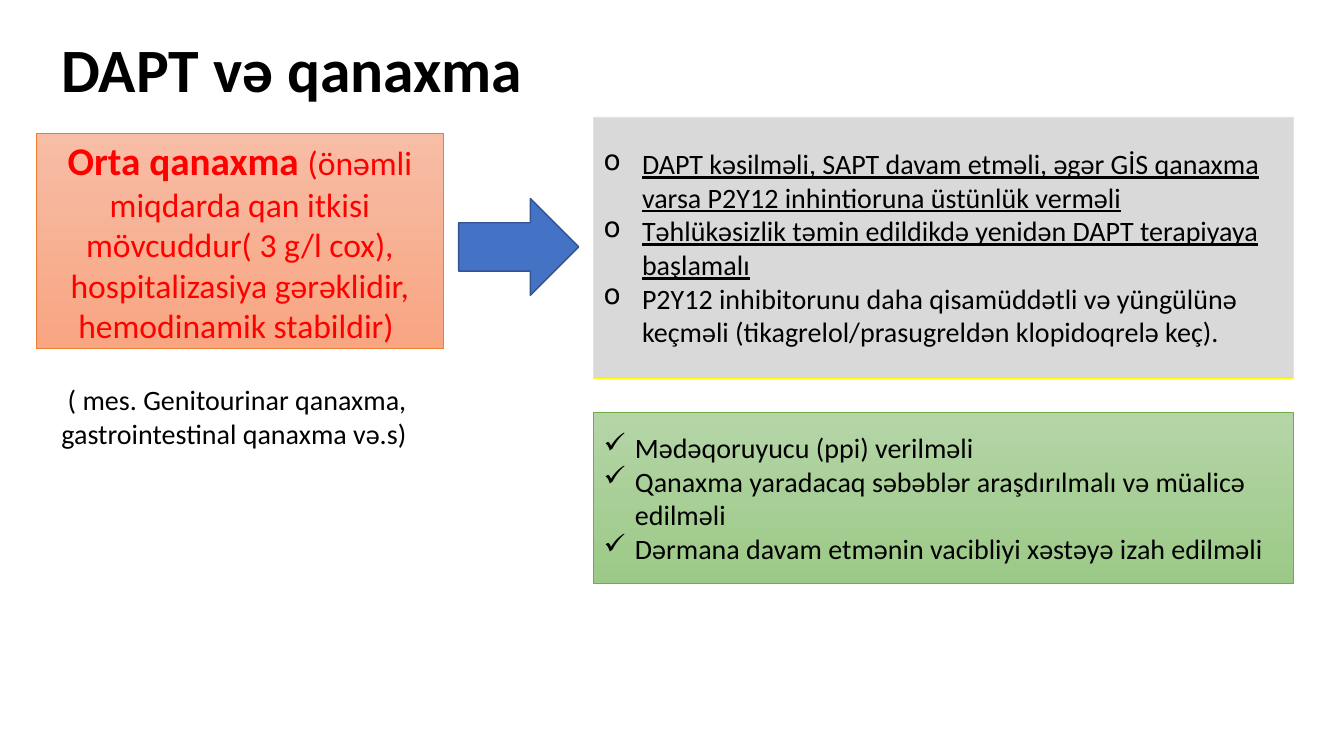
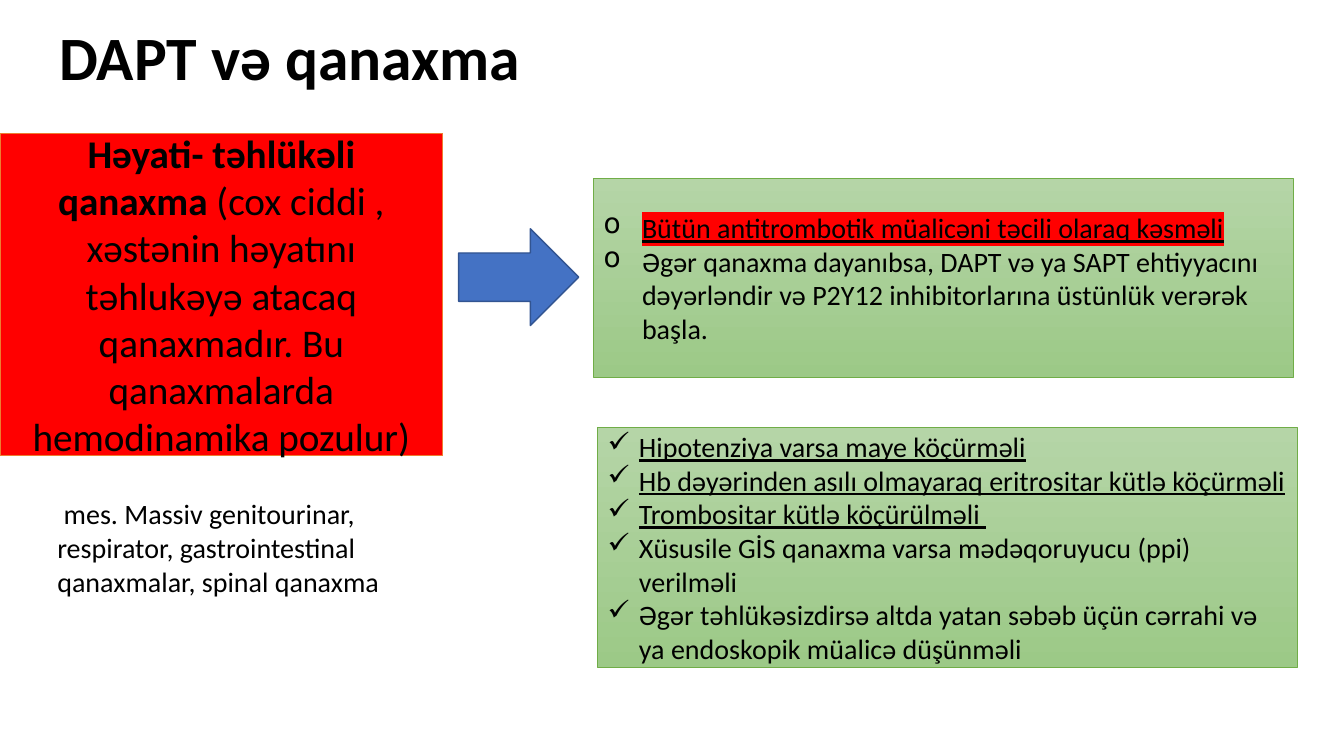
from lxml import etree
from pptx import Presentation
from pptx.dml.color import RGBColor
from pptx.enum.shapes import MSO_SHAPE
from pptx.enum.text import MSO_ANCHOR, PP_ALIGN
from pptx.oxml.ns import qn
from pptx.util import Inches, Pt

RECTANGLE, ARROW = MSO_SHAPE.RECTANGLE, MSO_SHAPE.RIGHT_ARROW
TOP, MIDDLE = MSO_ANCHOR.TOP, MSO_ANCHOR.MIDDLE
LEFT, CENTER = PP_ALIGN.LEFT, PP_ALIGN.CENTER

# Shared look
color = RGBColor.from_string
FONT = "Calibri"
BLACK, RED, BLUE, GRAY = "000000", "FF0000", "4472C4", "D9D9D9"
ORANGE_LINE, YELLOW_LINE, GREEN_LINE, BLUE_LINE = "ED7D31", "FFFF00", "70AD47", "325491"
ORANGE_FADE, GREEN_FADE = ("F7BDA5", "F8A582"), ("B5D5A7", "9CC987")
TITLE = "DAPT və qanaxma"
INDENTS = {"o": Inches(0.38), "✓": Inches(0.31)}

# Places are percentages of the slide: left, top, width, height
TITLE_WIDTH, TITLE_HEIGHT = 86.27, 19.33
ARROW_LEFT, ARROW_WIDTH, ARROW_HEIGHT = 34.13, 8.93, 12.8
PANEL_LEFT, PANEL_WIDTH = 44.18, 52.06

deck = Presentation()
deck.slide_width, deck.slide_height = Inches(13.33), Inches(7.5)


def add_box(page, place, kind=None, fill=None, line=None, line_width=0.5):
    """Add a text box, or a filled shape when a kind is given."""
    sides = (deck.slide_width, deck.slide_height) * 2
    lengths = [round(share * side / 100) for share, side in zip(place, sides)]
    if kind is None:
        return page.shapes.add_textbox(*lengths)
    box = page.shapes.add_shape(kind, *lengths)
    box.shadow.inherit = False
    if isinstance(fill, tuple):
        box.fill.gradient()
        box.fill.gradient_angle = 270
        for stop, shade in zip(box.fill.gradient_stops, fill):
            stop.color.rgb = color(shade)
    else:
        box.fill.solid()
        box.fill.fore_color.rgb = color(fill)
    box.line.color.rgb = color(line)
    box.line.width = Pt(line_width)
    return box


def write(box, paragraphs, size=20, ink=BLACK, align=LEFT, anchor=MIDDLE, bullet=None):
    """Fill a box; each paragraph is a list of (text, font settings) spans."""
    frame = box.text_frame
    frame.word_wrap = True
    frame.vertical_anchor = anchor
    for index, spans in enumerate(paragraphs):
        para = frame.add_paragraph() if index else frame.paragraphs[0]
        para.alignment = align
        if bullet:
            properties = para._p.get_or_add_pPr()
            properties.set("marL", str(INDENTS[bullet]))
            properties.set("indent", str(-INDENTS[bullet]))
            etree.SubElement(properties, qn("a:buChar")).set("char", bullet)
        for text, style in spans:
            span = para.add_run()
            span.text = text
            span.font.name = FONT
            span.font.size = Pt(style.get("size", size))
            span.font.bold = style.get("bold", False)
            span.font.underline = style.get("underline", False)
            span.font.color.rgb = color(ink)
            if "highlight" in style:
                highlight = etree.Element(qn("a:highlight"))
                etree.SubElement(highlight, qn("a:srgbClr")).set("val", style["highlight"])
                span._r.rPr.find(qn("a:solidFill")).addnext(highlight)


PLAIN, UNDERLINED = {}, {"underline": True}
ALERT = {"underline": True, "highlight": RED}
HEADING = {"size": 28, "bold": True}

slides = [
    {
        "title": (3.83, 0),
        "cause": ((2.7, 17.6, 30.3, 28.53), ORANGE_FADE, RED, 24),
        "cause_text": [
            ("Orta qanaxma ", HEADING),
            ("(önəmli miqdarda qan itkisi mövcuddur( 3 g/l cox), "
             "hospitalizasiya gərəklidir, hemodinamik stabildir) ", PLAIN),
        ],
        "note": (3.83, 50, 29.1, 10.27),
        "note_text": " ( mes. Genitourinar qanaxma, gastrointestinal qanaxma və.s)",
        "arrow_top": 26.27,
        "panels": [
            (PANEL_LEFT, 15.47, 34.53, GRAY, YELLOW_LINE, "o", [
                ("DAPT kəsilməli, SAPT davam etməli, əgər GİS qanaxma varsa "
                 "P2Y12 inhintioruna üstünlük verməli", UNDERLINED),
                ("Təhlükəsizlik təmin edildikdə yenidən DAPT terapiyaya başlamalı", UNDERLINED),
                ("P2Y12 inhibitorunu daha qisamüddətli və yüngülünə keçməli "
                 "(tikagrelol/prasugreldən klopidoqrelə keç).", PLAIN),
            ]),
            (PANEL_LEFT, 54.53, 22.67, GREEN_FADE, GREEN_LINE, "✓", [
                ("Mədəqoruyucu (ppi) verilməli", PLAIN),
                ("Qanaxma yaradacaq səbəblər araşdırılmalı və müalicə edilməli", PLAIN),
                ("Dərmana davam etmənin vacibliyi xəstəyə izah edilməli", PLAIN),
            ]),
        ],
    },
    {
        "title": (3.68, -1.6),
        "cause": ((0, 17.6, 32.93, 42.67), RED, BLACK, 28),
        "cause_text": [
            ("Həyati- təhlükəli qanaxma ", HEADING),
            ("(cox ciddi , xəstənin həyatını təhlukəyə atacaq qanaxmadır. "
             "Bu qanaxmalarda hemodinamika pozulur)", PLAIN),
        ],
        "note": (3.53, 65.07, 29.4, 14.8),
        "note_text": " mes. Massiv genitourinar, respirator, gastrointestinal "
                     "qanaxmalar, spinal qanaxma",
        "arrow_top": 30.27,
        "panels": [
            (PANEL_LEFT, 23.6, 26.27, GREEN_FADE, GREEN_LINE, "o", [
                ("Bütün antitrombotik müalicəni təcili olaraq kəsməli", ALERT),
                ("Əgər qanaxma dayanıbsa, DAPT və ya SAPT ehtiyyacını dəyərləndir "
                 "və P2Y12 inhibitorlarına üstünlük verərək başla.", PLAIN),
            ]),
            (44.48, 56.53, 31.73, GREEN_FADE, GREEN_LINE, "✓", [
                ("Hipotenziya varsa maye köçürməli", UNDERLINED),
                ("Hb dəyərinden asılı olmayaraq eritrositar kütlə köçürməli", UNDERLINED),
                ("Trombositar kütlə köçürülməli ", UNDERLINED),
                ("Xüsusile GİS qanaxma varsa mədəqoruyucu (ppi) verilməli", PLAIN),
                ("Əgər təhlükəsizdirsə altda yatan səbəb üçün cərrahi "
                 "və ya endoskopik müalicə düşünməli", PLAIN),
            ]),
        ],
    },
]

for content in slides:
    page = deck.slides.add_slide(deck.slide_layouts[6])

    # Title
    title = add_box(page, (*content["title"], TITLE_WIDTH, TITLE_HEIGHT))
    write(title, [[(TITLE, {"bold": True})]], size=44)
    title.text_frame.paragraphs[0].line_spacing = 0.9

    # Kind of bleeding, with examples below
    place, fill, ink, size = content["cause"]
    cause = add_box(page, place, RECTANGLE, fill, ORANGE_LINE)
    write(cause, [content["cause_text"]], size, ink, CENTER)
    note = add_box(page, content["note"])
    write(note, [[(content["note_text"], PLAIN)]], anchor=TOP)

    # Arrow to the measures
    add_box(page, (ARROW_LEFT, content["arrow_top"], ARROW_WIDTH, ARROW_HEIGHT),
            ARROW, BLUE, BLUE_LINE, 1)

    # Measures
    for left, top, height, fill, line, bullet, items in content["panels"]:
        panel = add_box(page, (left, top, PANEL_WIDTH, height), RECTANGLE, fill, line)
        write(panel, [[item] for item in items], bullet=bullet)

deck.save("out.pptx")
